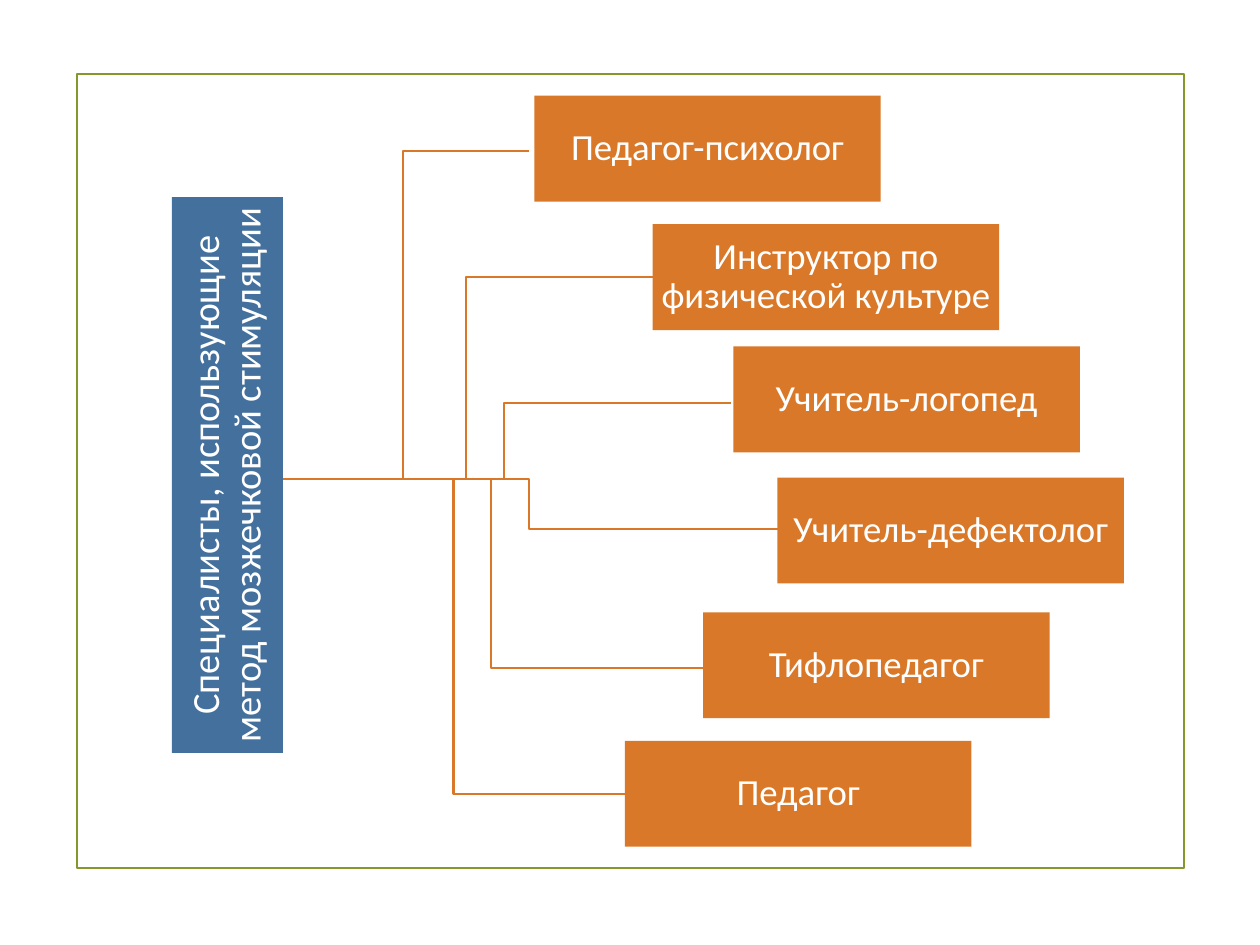
from pptx import Presentation
from pptx.dml.color import RGBColor
from pptx.enum.shapes import MSO_SHAPE
from pptx.enum.text import MSO_ANCHOR, PP_ALIGN
from pptx.util import Inches, Pt

GREEN = RGBColor(0x83, 0x99, 0x2A)
BLUE = RGBColor(0x44, 0x70, 0x9D)
ORANGE = RGBColor(0xD9, 0x78, 0x28)
WHITE = RGBColor(0xFF, 0xFF, 0xFF)

deck = Presentation()
deck.slide_width, deck.slide_height = Inches(10), Inches(7.5)
col = deck.slide_width / 100
row = deck.slide_height / 75
slide = deck.slides.add_slide(deck.slide_layouts[6])
shapes = slide.shapes


def add_rect(left, top, wide, high):
    rect = shapes.add_shape(MSO_SHAPE.RECTANGLE, int(left * col), int(top * row),
                            int(wide * col), int(high * row))
    rect.shadow.inherit = False
    return rect


def add_label(left, top, wide, high, text, size, fill, inset):
    box = add_rect(left, top, wide, high)
    box.fill.solid()
    box.fill.fore_color.rgb = fill
    box.line.fill.background()
    frame = box.text_frame
    frame.text = text
    frame.word_wrap = True
    frame.vertical_anchor = MSO_ANCHOR.MIDDLE
    frame.margin_left = frame.margin_right = Inches(inset)
    frame.margin_top = frame.margin_bottom = Inches(inset)
    para = frame.paragraphs[0]
    para.alignment = PP_ALIGN.CENTER
    para.line_spacing = 0.9
    font = para.runs[0].font
    font.name, font.size = "Calibri", Pt(size)
    font.color.rgb = WHITE
    return box


border = add_rect(6.1, 5.9, 87.9, 63)
border.fill.background()
border.line.color.rgb = GREEN
border.line.width = Pt(1.25)

roles = [
    ("Педагог-психолог", 42.4, 7.6),
    ("Инструктор по физической культуре", 51.8, 17.8),
    ("Учитель-логопед", 58.2, 27.5),
    ("Учитель-дефектолог", 61.7, 37.9),
    ("Тифлопедагог", 55.8, 48.6),
    ("Педагог", 49.6, 58.8),
]
wide, high = 27.5, 8.4
stem, mid = 22.4, 37.7

for text, left, top in reversed(roles):
    bend, end = (stem + left) / 2, top + high / 2
    pen = shapes.build_freeform(stem, mid, scale=(col, row))
    pen.add_line_segments([(bend, mid), (bend, end), (left, end)], close=False)
    branch = pen.convert_to_shape()
    branch.shadow.inherit = False
    branch.fill.background()
    branch.line.color.rgb = ORANGE
    branch.line.width = Pt(1.25)

root = add_label(-4, 33.3, 44.1, 8.8,
                 "Специалисты, использующие метод мозжечковой стимуляции",
                 22, BLUE, 0.02)
root.rotation = 270

for text, left, top in roles:
    add_label(left, top, wide, high, text, 21, ORANGE, 0.01)

deck.save("out.pptx")
